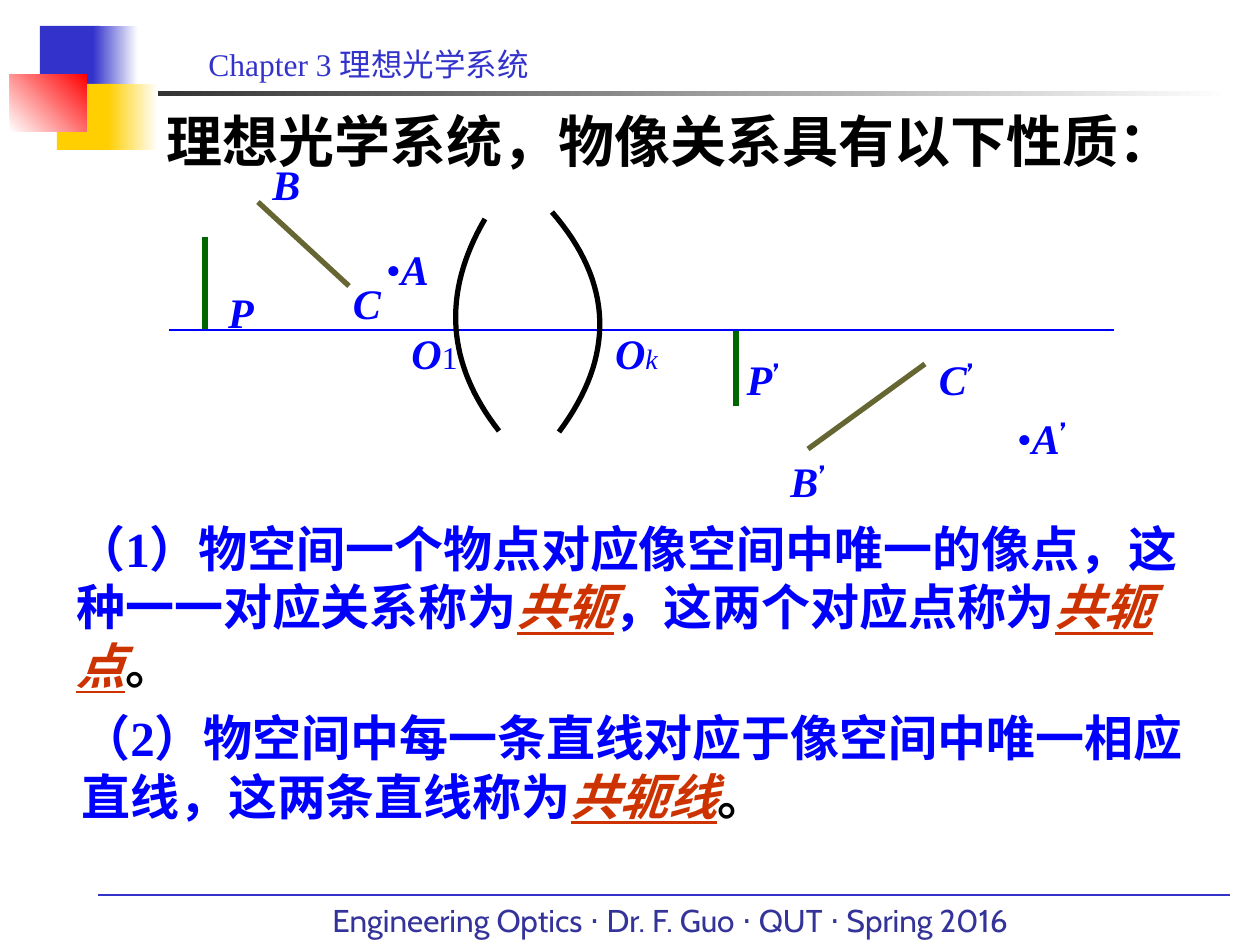
"""Build the slide on object-image relations in an ideal optical system."""
from lxml.etree import SubElement
from pptx import Presentation
from pptx.dml.color import RGBColor
from pptx.enum.shapes import MSO_CONNECTOR, MSO_SHAPE
from pptx.enum.text import MSO_ANCHOR, MSO_AUTO_SIZE, PP_ALIGN
from pptx.oxml.ns import qn
from pptx.util import Pt

PX = 914400 / 126
SLIDE = (1260, 945)
THEME = {
    "serif": "Times New Roman", "sans": "Cabin",
    "black": "000000", "white": "FFFFFF", "charcoal": "1C1C1C",
    "indigo": "3333CC", "navy": "333399", "yellow": "FFCF01", "red": "FF0000",
    "blue": "0000FF", "olive": "666633", "green": "006600", "rust": "CC3300",
    "title": 32, "body": 28, "label": 24, "small": 18, "index": 16,
    "thick": 3, "thin": 1.5,
}

TITLE = ("理想光学系统，物像关系具有以下性质：", (154, 86, 1071, 108))
HEADER = ("Chapter 3 理想光学系统", (196, 26, 424, 63))
FOOTER = ("Engineering Optics ⋅ Dr. F. Guo ⋅ QUT ⋅ Spring 2016", (320, 895, 900, 50))

ORNAMENTS = [
    ((34, 91, 1198, 5), "charcoal", "white", 0),
    ((40, 26, 60, 66), "indigo", None, 0),
    ((93, 26, 45, 66), "indigo", "white", 0),
    ((57, 84, 58, 66), "yellow", None, 0),
    ((108, 84, 50, 66), "yellow", "white", 0),
    ((10, 74, 77, 58), "white", "red", 45),
]
LINES = [
    ((98, 895), (1230, 895), "indigo", "thin"),
    ((258, 202), (349, 286), "olive", "thick"),
    ((205, 237), (205, 330), "green", "thick"),
    ((736, 330), (736, 406), "green", "thick"),
    ((925, 364), (808, 449), "olive", "thick"),
    ((169, 330), (1114, 330), "blue", "thin"),
]
LENS_SURFACES = [
    ((552, 212), (644, 318), (559, 432)),
    ((485, 219), (420, 330), (499, 431)),
]
CURVE_STEPS = 32

LABEL_HEIGHT = 63
LABELS = [
    ((205, 280, 72), [("letter", "P")]),
    ((367, 237, 81), [("dot", "•"), ("letter", "A")]),
    ((988, 406, 108), [("dot", "•"), ("letter", "A"), ("prime", "’")]),
    ((727, 347, 72), [("letter", "P"), ("prime", "’")]),
    ((394, 321, 81), [("letter", "O"), ("number", "1")]),
    ((583, 321, 107), [("letter", "O"), ("variable", "k")]),
    ((260, 152, 49), [("letter", "B")]),
    ((331, 271, 72), [("letter", "C")]),
    ((916, 347, 81), [("letter", "C"), ("prime", "’")]),
    ((772, 449, 72), [("letter", "B"), ("prime", "’")]),
]
PROPERTIES = [
    ((64, 512, 1147, 189), [
        ("plain", "（1）物空间一个物点对应像空间中唯一的像点，这种一一对应关系称为"),
        ("term", "共轭"), ("plain", "，这两个对应点称为"),
        ("term", "共轭点"), ("stop", "。")]),
    ((69, 701, 1147, 130), [
        ("plain", "（2）物空间中每一条直线对应于像空间中唯一相应直线，这两条直线称为"),
        ("term", "共轭线"), ("stop", "。")]),
]
STYLES = {
    "letter": ("serif", "label", "blue", True, True, False),
    "dot": ("serif", "label", "blue", False, False, False),
    "prime": ("sans", "label", "blue", False, False, False),
    "number": ("serif", "small", "blue", False, False, False),
    "variable": ("serif", "index", "blue", False, True, False),
    "plain": ("serif", "body", "blue", True, False, False),
    "term": ("serif", "body", "rust", True, True, True),
    "stop": ("serif", "body", "black", True, False, False),
    "title": ("sans", "title", "black", True, False, False),
    "header": ("serif", "small", "indigo", False, False, False),
    "footer": ("sans", "small", "navy", False, False, False),
}


def emu(lengths):
    return [round(length * PX) for length in lengths]


def color(name):
    return RGBColor.from_string(THEME[name])


def set_font(font, style):
    face, size, ink, font.bold, font.italic, font.underline = STYLES[style]
    font.name = THEME[face]
    font.size = Pt(THEME[size])
    font.color.rgb = color(ink)


def add_ornament(slide, box, start, end, angle):
    ornament = slide.shapes.add_shape(MSO_SHAPE.RECTANGLE, *emu(box))
    ornament.shadow.inherit = False
    ornament.line.fill.background()
    if end is None:
        ornament.fill.solid()
        ornament.fill.fore_color.rgb = color(start)
        return
    ornament.fill.gradient()
    ornament.fill.gradient_angle = angle
    for stop, name in zip(ornament.fill.gradient_stops, (start, end)):
        stop.color.rgb = color(name)


def add_line(slide, start, end, ink, weight):
    line = slide.shapes.add_connector(MSO_CONNECTOR.STRAIGHT, *emu(start + end))
    line.line.color.rgb = color(ink)
    line.line.width = Pt(THEME[weight])
    SubElement(line._element.spPr, qn("a:effectLst"))


def add_lens_surface(slide, top, control, bottom):
    points = []
    for step in range(CURVE_STEPS + 1):
        t = step / CURVE_STEPS
        points.append(emu(
            (1 - t) ** 2 * a + 2 * t * (1 - t) * b + t ** 2 * c
            for a, b, c in zip(top, control, bottom)))
    builder = slide.shapes.build_freeform(*points[0])
    builder.add_line_segments(points[1:], close=False)
    surface = builder.convert_to_shape()
    surface.shadow.inherit = False
    surface.fill.background()
    surface.line.color.rgb = color("black")
    surface.line.width = Pt(THEME["thick"])


def fill_text(holder, runs, align, anchor):
    frame = holder.text_frame
    frame.word_wrap = True
    frame.auto_size = MSO_AUTO_SIZE.NONE
    frame.vertical_anchor = anchor
    paragraph = frame.paragraphs[0]
    paragraph.alignment = align
    for style, words in runs:
        run = paragraph.add_run()
        run.text = words
        set_font(paragraph.font if len(runs) == 1 else run.font, style)


def add_text(slide, box, runs, align=PP_ALIGN.LEFT, anchor=MSO_ANCHOR.TOP):
    fill_text(slide.shapes.add_textbox(*emu(box)), runs, align, anchor)


def main():
    deck = Presentation()
    deck.slide_width, deck.slide_height = emu(SLIDE)
    slide = deck.slides.add_slide(deck.slide_layouts.get_by_name("Title Only"))

    for ornament in ORNAMENTS:
        add_ornament(slide, *ornament)
    for line in LINES:
        add_line(slide, *line)
    for surface in LENS_SURFACES:
        add_lens_surface(slide, *surface)

    heading, heading_box = TITLE
    title = slide.shapes.title
    title.left, title.top, title.width, title.height = emu(heading_box)
    fill_text(title, [("title", heading)], PP_ALIGN.LEFT, MSO_ANCHOR.MIDDLE)

    chapter, chapter_box = HEADER
    add_text(slide, chapter_box, [("header", chapter)], anchor=MSO_ANCHOR.BOTTOM)
    course, course_box = FOOTER
    add_text(slide, course_box, [("footer", course)])
    for place, runs in LABELS:
        add_text(slide, (*place, LABEL_HEIGHT), runs, PP_ALIGN.CENTER)
    for box, runs in PROPERTIES:
        add_text(slide, box, runs)
    deck.save("out.pptx")


if __name__ == "__main__":
    main()
